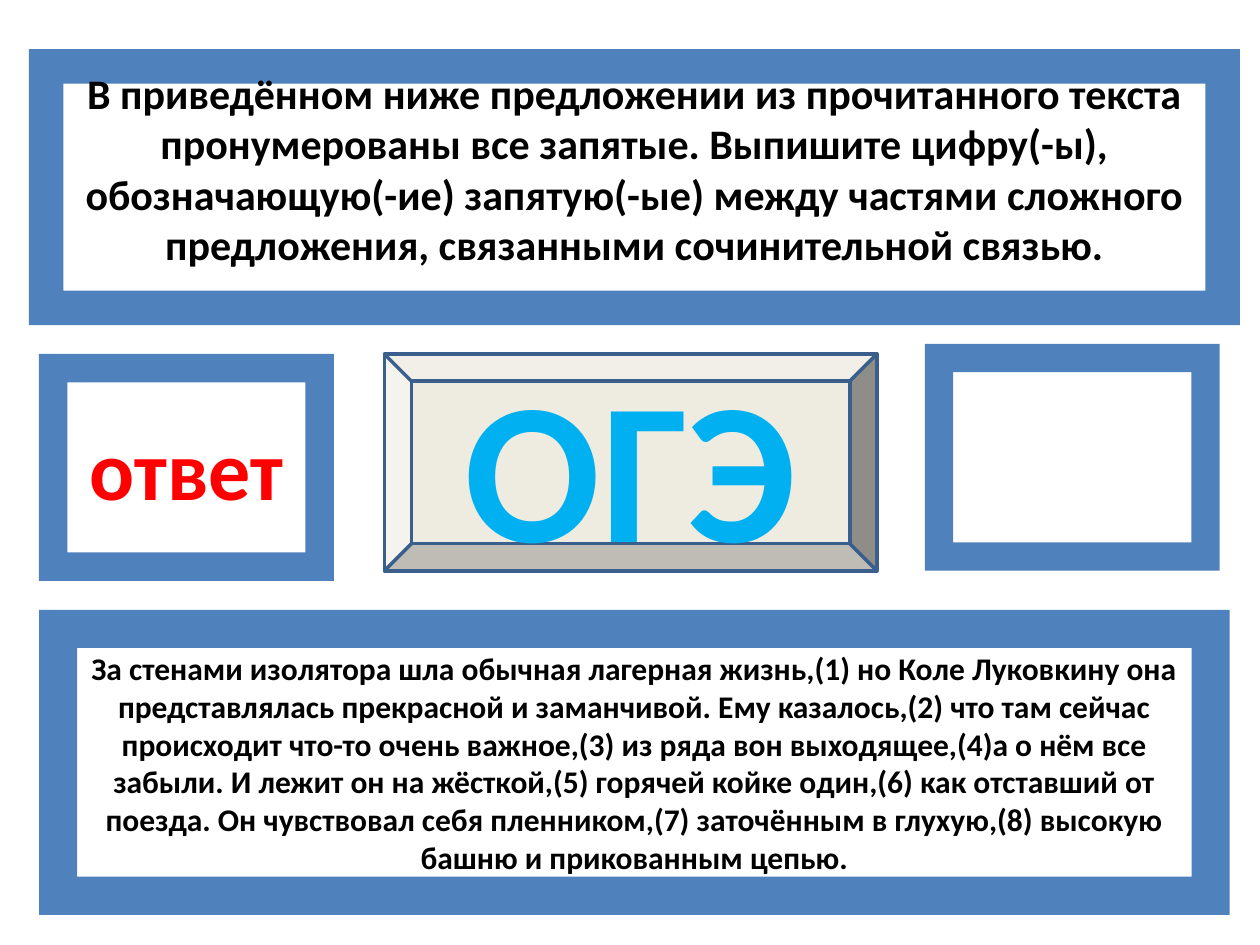
from pptx import Presentation
from pptx.dml.color import RGBColor
from pptx.enum.shapes import MSO_SHAPE
from pptx.enum.text import MSO_ANCHOR, PP_ALIGN
from pptx.util import Inches, Pt

BLUE = RGBColor(0x4F, 0x81, 0xBD)
DARK_BLUE = RGBColor(0x3A, 0x5F, 0x8C)
CREAM = RGBColor(0xEE, 0xEC, 0xE1)
RED = RGBColor(0xFF, 0x00, 0x00)
SKY = RGBColor(0x00, 0xB0, 0xF0)
BLACK = RGBColor(0x00, 0x00, 0x00)

TASK = (
    "В приведённом ниже предложении из прочитанного текста пронумерованы все "
    "запятые. Выпишите цифру(-ы), обозначающую(-ие) запятую(-ые) между частями "
    "сложного предложения, связанными сочинительной связью."
)
PASSAGE = (
    "За стенами изолятора шла обычная лагерная жизнь,(1) но Коле Луковкину она "
    "представлялась прекрасной и заманчивой. Ему казалось,(2) что там сейчас "
    "происходит что-то очень важное,(3) из ряда вон выходящее,(4)а о нём все "
    "забыли. И лежит он на жёсткой,(5) горячей койке один,(6) как отставший от "
    "поезда. Он чувствовал себя пленником,(7) заточённым в глухую,(8) высокую "
    "башню и прикованным цепью."
)

MARGIN = 0.31
SMALL_FRAME = (2.34, 1.8)
ROW_TOP = 2.81

# left, top, width, height; text, size, colour; bottom inset
FRAMES = [
    ((MARGIN, ROW_TOP, *SMALL_FRAME), "ответ", 48, RED, 0.05),
    ((7.34, 2.73, *SMALL_FRAME), "", 18, BLACK, 0.05),
    ((0.23, 0.39, 9.61, 2.19), TASK, 24, BLACK, 0.35),
    ((MARGIN, 4.84, 9.45, 2.42), PASSAGE, 18, BLACK, 0.05),
]
EXAM_PLATE = ((3.05, ROW_TOP, 3.91, 1.72), "ОГЭ", 115, SKY, 0.05)


def add_panel(slide, preset, fill, box, text, size, colour, bottom_inset):
    """Add a filled, unlined shape with centred bold text and return it."""
    panel = slide.shapes.add_shape(preset, *map(Inches, box))
    panel.shadow.inherit = False
    panel.fill.solid()
    panel.fill.fore_color.rgb = fill
    panel.line.fill.background()
    frame = panel.text_frame
    frame.word_wrap = True
    frame.vertical_anchor = MSO_ANCHOR.MIDDLE
    frame.margin_bottom = Inches(bottom_inset)
    if text:
        paragraph = frame.paragraphs[0]
        paragraph.alignment = PP_ALIGN.CENTER
        run = paragraph.add_run()
        run.text = text
        run.font.name = "Calibri"
        run.font.size = Pt(size)
        run.font.bold = True
        run.font.color.rgb = colour
    return panel


def main():
    deck = Presentation()
    deck.slide_width, deck.slide_height = Inches(10), Inches(7.5)
    slide = deck.slides.add_slide(deck.slide_layouts[6])
    for content in FRAMES:
        add_panel(slide, MSO_SHAPE.FRAME, BLUE, *content)
    plate = add_panel(slide, MSO_SHAPE.BEVEL, CREAM, *EXAM_PLATE)
    plate.line.color.rgb = DARK_BLUE
    plate.line.width = Pt(2)
    deck.save("out.pptx")


if __name__ == "__main__":
    main()
